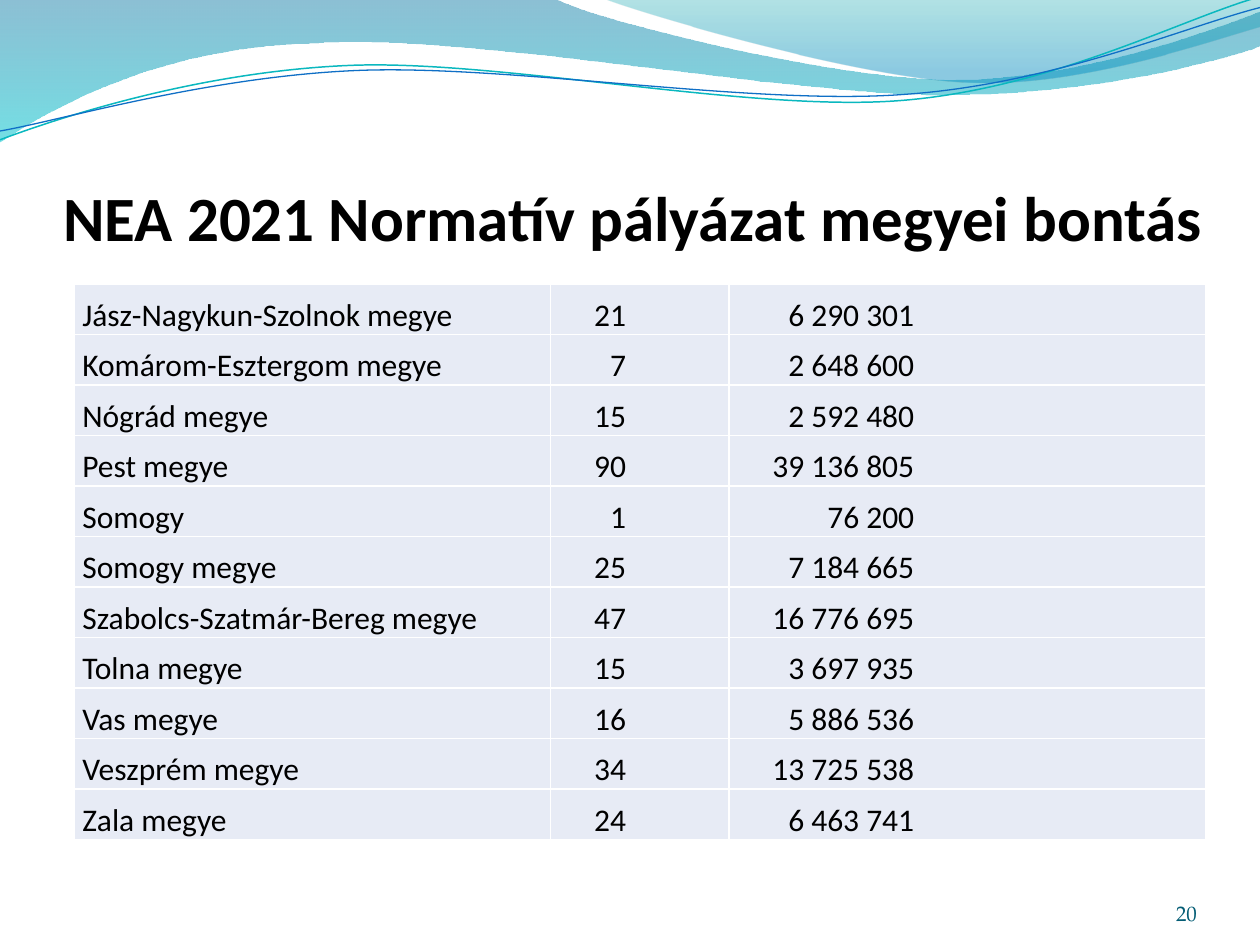
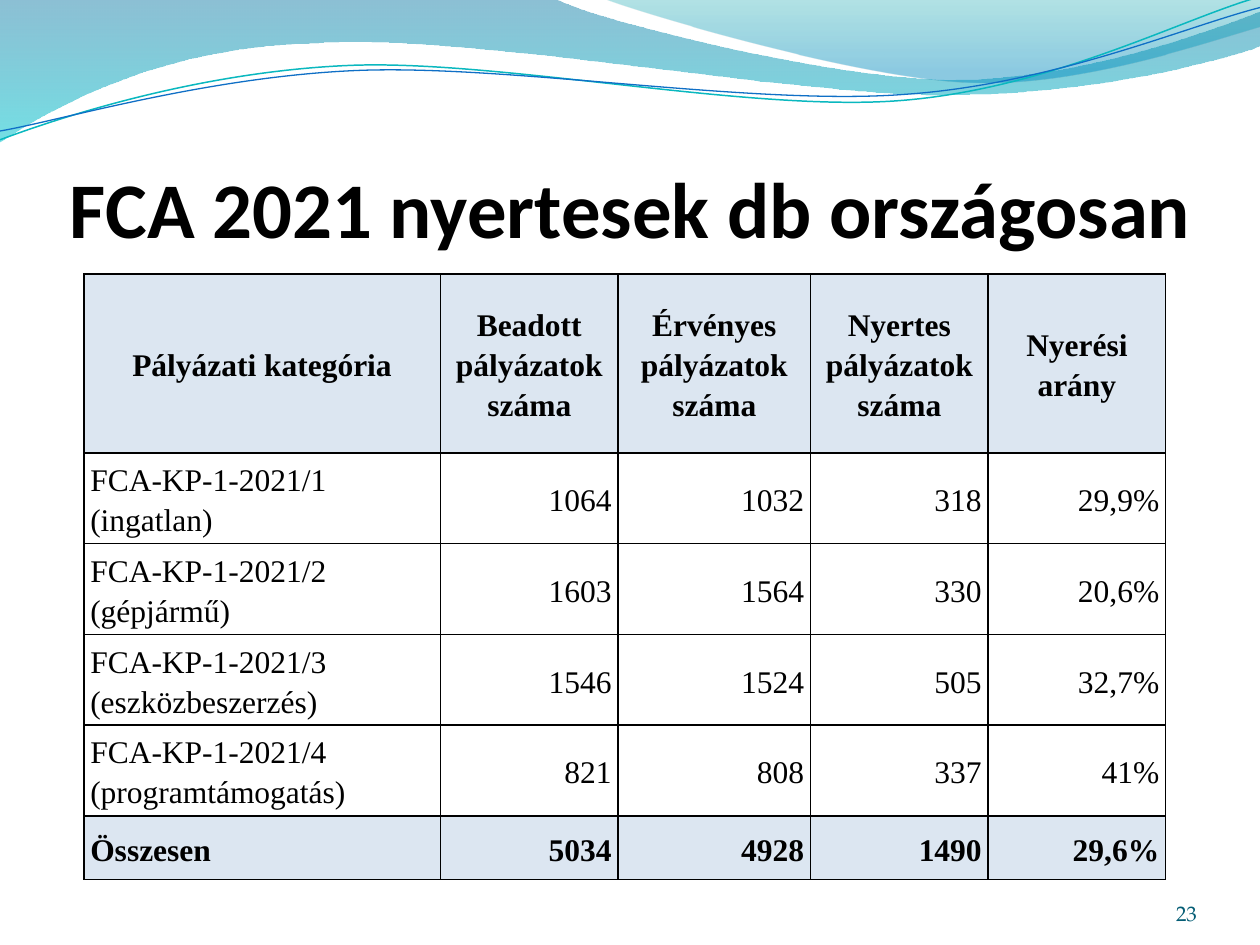
from lxml.etree import SubElement
from pptx import Presentation
from pptx.dml.color import RGBColor
from pptx.enum.text import MSO_ANCHOR, PP_ALIGN
from pptx.oxml import parse_xml
from pptx.oxml.ns import nsdecls, qn
from pptx.util import Cm, Pt

COLORS = {
    "text": "000000", "page_number": "045D75", "county_fill": "E7EBF5",
    "county_border": "FFFFFF", "category_fill": "DCE6F1", "category_border": "000000",
    "band_top": "0074A1", "band_bottom": "00C6CF", "corner_top": "00A1A9",
    "corner_bottom": "008BBF", "teal_line": "0AB8BF", "blue_line": "0F6FC6",
}
SLIDE_WIDTH, SLIDE_HEIGHT = Cm(25.4), Cm(19.05)
WAVE_UNIT = SLIDE_WIDTH / 1000

COUNTIES = [
    ("Jász-Nagykun-Szolnok megye", "21", "6 290 301"),
    ("Komárom-Esztergom megye", "7", "2 648 600"),
    ("Nógrád megye", "15", "2 592 480"),
    ("Pest megye", "90", "39 136 805"),
    ("Somogy", "1", "76 200"),
    ("Somogy megye", "25", "7 184 665"),
    ("Szabolcs-Szatmár-Bereg megye", "47", "16 776 695"),
    ("Tolna megye", "15", "3 697 935"),
    ("Vas megye", "16", "5 886 536"),
    ("Veszprém megye", "34", "13 725 538"),
    ("Zala megye", "24", "6 463 741"),
]
CATEGORIES = [
    ("Pályázati kategória", "Beadott pályázatok száma", "Érvényes pályázatok száma",
     "Nyertes pályázatok száma", "Nyerési arány"),
    ("FCA-KP-1-2021/1 (ingatlan)", "1064", "1032", "318", "29,9%"),
    ("FCA-KP-1-2021/2 (gépjármű)", "1603", "1564", "330", "20,6%"),
    ("FCA-KP-1-2021/3 (eszközbeszerzés)", "1546", "1524", "505", "32,7%"),
    ("FCA-KP-1-2021/4 (programtámogatás)", "821", "808", "337", "41%"),
    ("Összesen", "5034", "4928", "1490", "29,6%"),
]

BANDS = [
    {"outline": [(0, 0), (440, -1), (476, 17, 664, 63, 758, 63), (853, 63, 958, 26, 1000, 9),
                 (1001, 36), (983, 44, 870, 76, 746, 75), (622, 75, 382, 28, 257, 34),
                 (129, 36, 46, 83, -1, 113)],
     "stops": [(0, "band_top", 45), (1, "band_bottom", 55)]},
    {"outline": [(479, -1), (509, 11, 682, 62, 769, 65), (856, 69, 961, 32, 1000, 21), (1000, 0)],
     "stops": [(0, "corner_top", 30), (0.8, "corner_bottom", 45)]},
]
WAVE_LINES = [
    {"outline": [(0, 111), (48, 93, 158, 57, 277, 52), (395, 47, 593, 89, 713, 80),
                 (833, 71, 938, 15, 998, -2)],
     "color": "teal_line", "width": 0.85},
    {"outline": [(0, 104), (47, 96, 164, 61, 283, 56), (403, 51, 597, 84, 717, 75),
                 (836, 67, 941, 21, 1000, 6)],
     "color": "blue_line", "width": 0.75},
]


def rgb(name):
    return RGBColor.from_string(COLORS[name])


def apply_format(target, values):
    for name, value in values.items():
        setattr(target, name, value)


def add_outline(slide, outline, close):
    points = [(step[index] * WAVE_UNIT, step[index + 1] * WAVE_UNIT)
              for step in outline for index in range(0, len(step), 2)]
    builder = slide.shapes.build_freeform(*points[0])
    builder.add_line_segments(points[1:], close=close)
    shape = builder.convert_to_shape()
    shape.shadow.inherit = False
    segments = iter(list(shape._element.iter(qn("a:lnTo"))))
    for step in outline[1:]:
        group = [next(segments) for _ in range(len(step) // 2)]
        if len(group) == 3:
            curve = parse_xml(f'<a:cubicBezTo {nsdecls("a")}/>')
            group[0].addprevious(curve)
            for segment in group:
                curve.append(segment[0])
                segment.getparent().remove(segment)
    return shape


def add_waves(slide):
    shapes = []
    for band in BANDS:
        shape = add_outline(slide, band["outline"], True)
        shape.line.fill.background()
        shape.fill.gradient()
        shape.fill.gradient_angle = 270
        for stop, (position, color, opacity) in zip(shape.fill.gradient_stops, band["stops"]):
            stop.position = position
            stop.color.rgb = rgb(color)
        color_elements = shape.fill._xPr.iter(qn("a:srgbClr"))
        for element, (_, _, opacity) in zip(color_elements, band["stops"]):
            SubElement(element, qn("a:alpha")).set("val", str(opacity * 1000))
        shapes.append(shape)
    for wave in WAVE_LINES:
        shape = add_outline(slide, wave["outline"], False)
        shape.fill.background()
        shape.line.color.rgb = rgb(wave["color"])
        shape.line.width = Pt(wave["width"])
        shapes.append(shape)
    return shapes


def move_to_layout(shapes, layout):
    for placeholder in list(layout.placeholders):
        placeholder._element.getparent().remove(placeholder._element)
    for shape in shapes:
        layout.shapes._spTree.append(shape._element)


def write_text(text_frame, text, font, alignment, color="text", spacing=None):
    paragraph = text_frame.paragraphs[0]
    apply_format(paragraph, {"alignment": alignment, "line_spacing": spacing})
    run = paragraph.add_run()
    run.text = text
    apply_format(run.font, font)
    run.font.color.rgb = rgb(color)


def add_text(slide, box, text, font, alignment, color="text", margin_top=0):
    text_frame = slide.shapes.add_textbox(*map(Cm, box)).text_frame
    apply_format(text_frame, {"word_wrap": True, "vertical_anchor": MSO_ANCHOR.BOTTOM,
                              "margin_left": 0, "margin_right": 0,
                              "margin_top": Cm(margin_top), "margin_bottom": 0})
    write_text(text_frame, text, font, alignment, color)


def add_title(slide, text, size, width, alignment):
    font = {"name": "Calibri", "size": Pt(size), "bold": True}
    add_text(slide, (1.28, 1.94, width, 3.18), text, font, alignment, margin_top=0.13)


def add_page_number(slide, number):
    font = {"name": "TeX Gyre Pagella", "size": Pt(12)}
    add_text(slide, (22.02, 17.65, 2.11, 1.02), number, font, PP_ALIGN.RIGHT, "page_number")


def set_borders(cell, color):
    properties = cell._tc.get_or_add_tcPr()
    for index, side in enumerate("LRTB"):
        properties.insert(index, parse_xml(
            f'<a:ln{side} {nsdecls("a")} w="12700"><a:solidFill>'
            f'<a:srgbClr val="{COLORS[color]}"/></a:solidFill></a:ln{side}>'))


def add_grid(slide, rows, left, top, widths, heights, border, cell_style):
    frame = slide.shapes.add_table(len(rows), len(widths), Cm(left), Cm(top),
                                   Cm(sum(widths)), Cm(sum(heights)))
    table = frame.table
    apply_format(table, {"first_row": False, "horz_banding": False})
    for column, width in zip(table.columns, widths):
        column.width = Cm(width)
    for row_index, (row, height) in enumerate(zip(rows, heights)):
        table.rows[row_index].height = Cm(height)
        for column_index, text in enumerate(row):
            cell = table.cell(row_index, column_index)
            style = cell_style(row_index, column_index)
            apply_format(cell, style["cell"])
            if style["fill"]:
                cell.fill.solid()
                cell.fill.fore_color.rgb = rgb(style["fill"])
            else:
                cell.fill.background()
            set_borders(cell, border)
            write_text(cell.text_frame, text, style["font"], style["alignment"],
                       spacing=style.get("spacing"))


def county_style(row, column):
    return {
        "cell": {"vertical_anchor": MSO_ANCHOR.BOTTOM, "margin_left": Cm(0.16),
                 "margin_right": Cm((0.03, 2.08, 5.87)[column]),
                 "margin_top": Cm(0.03), "margin_bottom": 0},
        "fill": "county_fill",
        "font": {"name": "Calibri", "size": Pt(18), "bold": False},
        "alignment": PP_ALIGN.RIGHT if column else PP_ALIGN.LEFT,
    }


def category_style(row, column):
    emphasized = row in (0, len(CATEGORIES) - 1)
    body_alignment = PP_ALIGN.RIGHT if column else PP_ALIGN.JUSTIFY
    return {
        "cell": {"vertical_anchor": MSO_ANCHOR.MIDDLE, "margin_left": Cm(0.13),
                 "margin_right": Cm(0.13), "margin_top": 0, "margin_bottom": 0},
        "fill": "category_fill" if emphasized else None,
        "font": {"name": "Times New Roman", "size": Pt(18), "bold": emphasized},
        "alignment": body_alignment if row else PP_ALIGN.CENTER,
        "spacing": 1.15,
    }


def main():
    presentation = Presentation()
    apply_format(presentation, {"slide_width": SLIDE_WIDTH, "slide_height": SLIDE_HEIGHT})
    layout = presentation.slide_layouts[6]

    county_slide = presentation.slides.add_slide(layout)
    move_to_layout(add_waves(county_slide), layout)
    add_title(county_slide, "NEA 2021 Normatív pályázat megyei bontás", 36, 23.42, PP_ALIGN.LEFT)
    add_page_number(county_slide, "20")
    add_grid(county_slide, COUNTIES, 1.5, 5.73, [9.6, 3.6, 9.6],
             [11.2 / len(COUNTIES)] * len(COUNTIES), "county_border", county_style)

    category_slide = presentation.slides.add_slide(layout)
    add_title(category_slide, "FCA 2021 nyertesek db országosan", 45, 22.86, PP_ALIGN.CENTER)
    add_grid(category_slide, CATEGORIES, 1.69, 5.52, [7.19, 3.58, 3.88, 3.58, 3.58],
             [3.61] + [1.83] * 4 + [1.28], "category_border", category_style)
    add_page_number(category_slide, "23")

    presentation.save("out.pptx")


if __name__ == "__main__":
    main()
